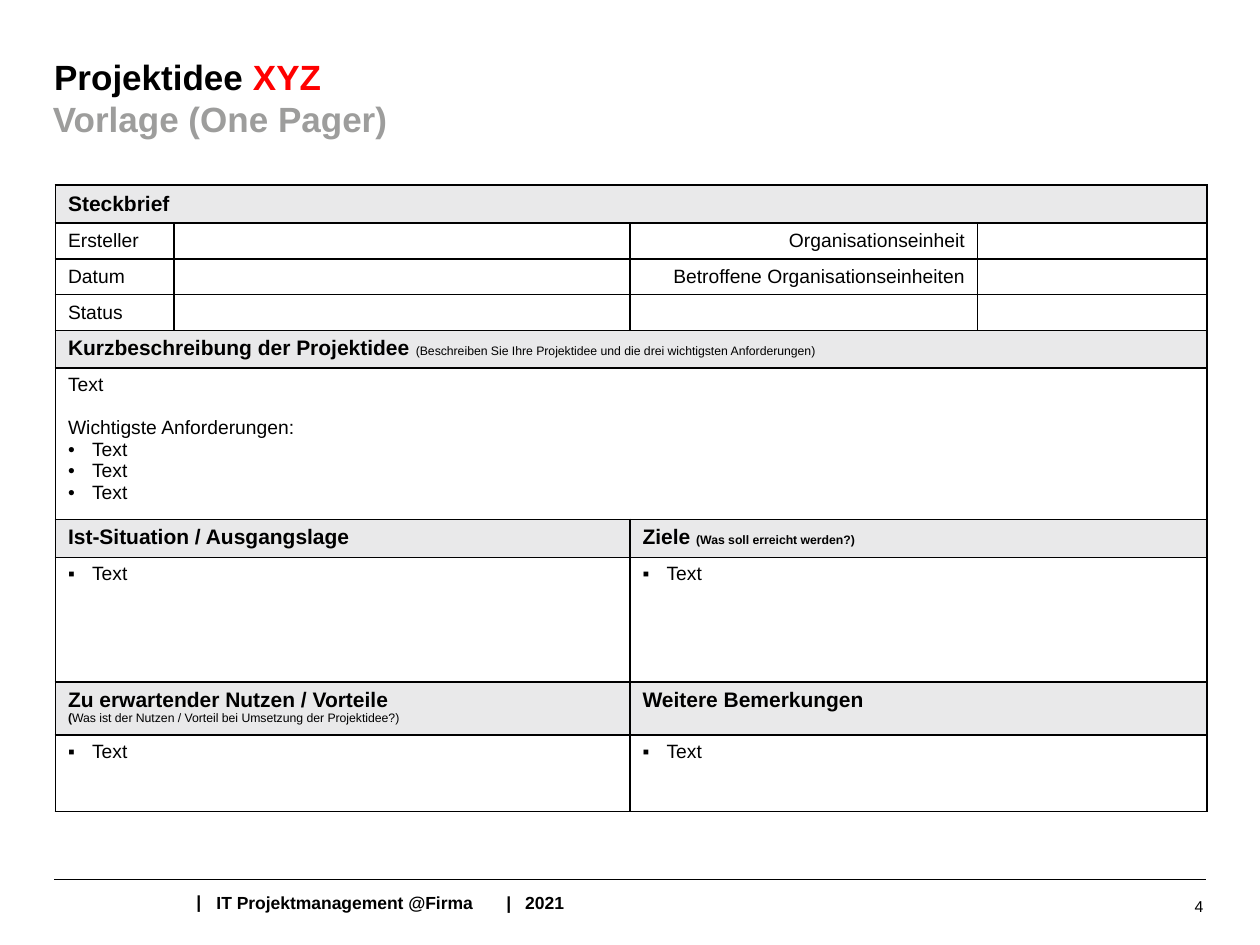
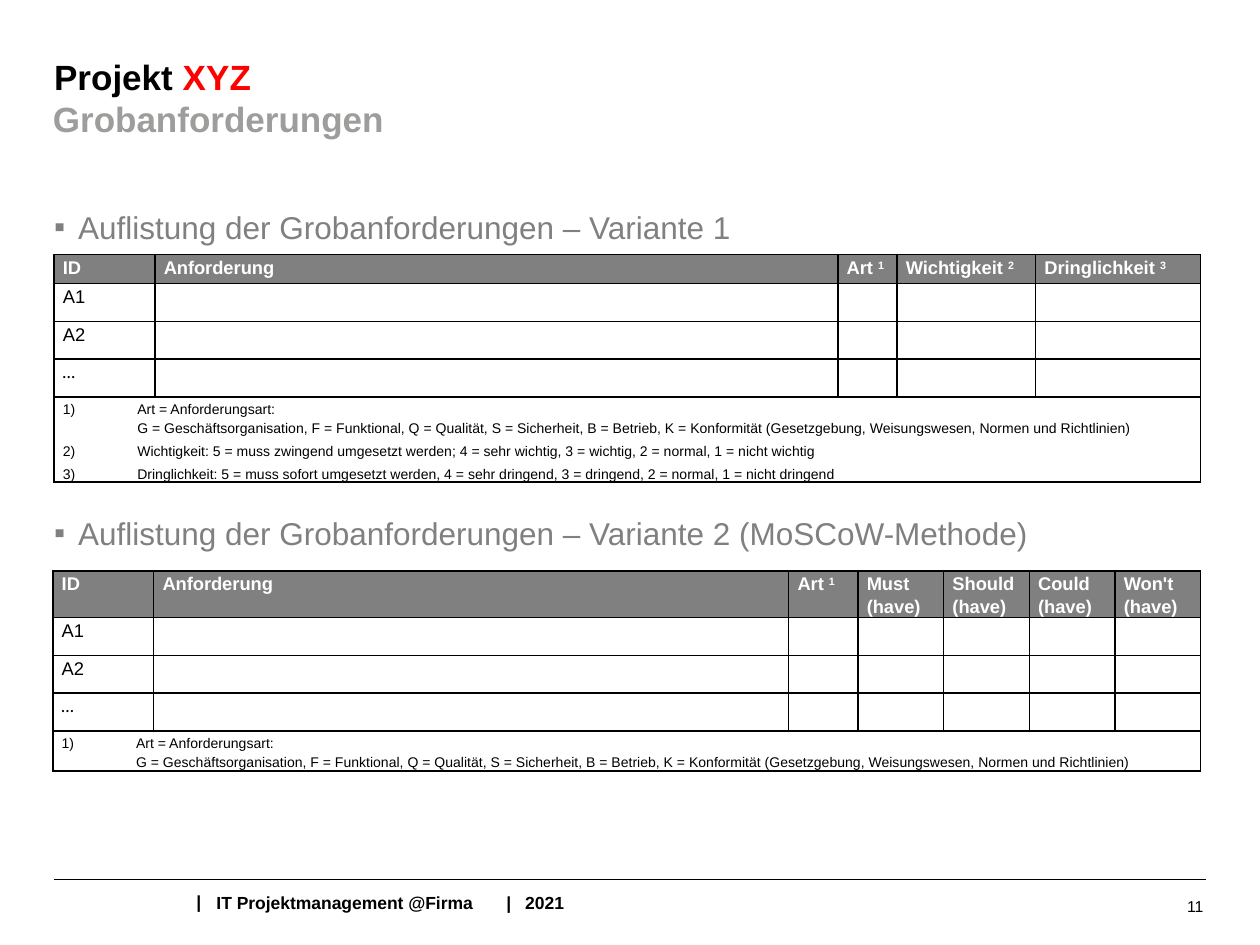
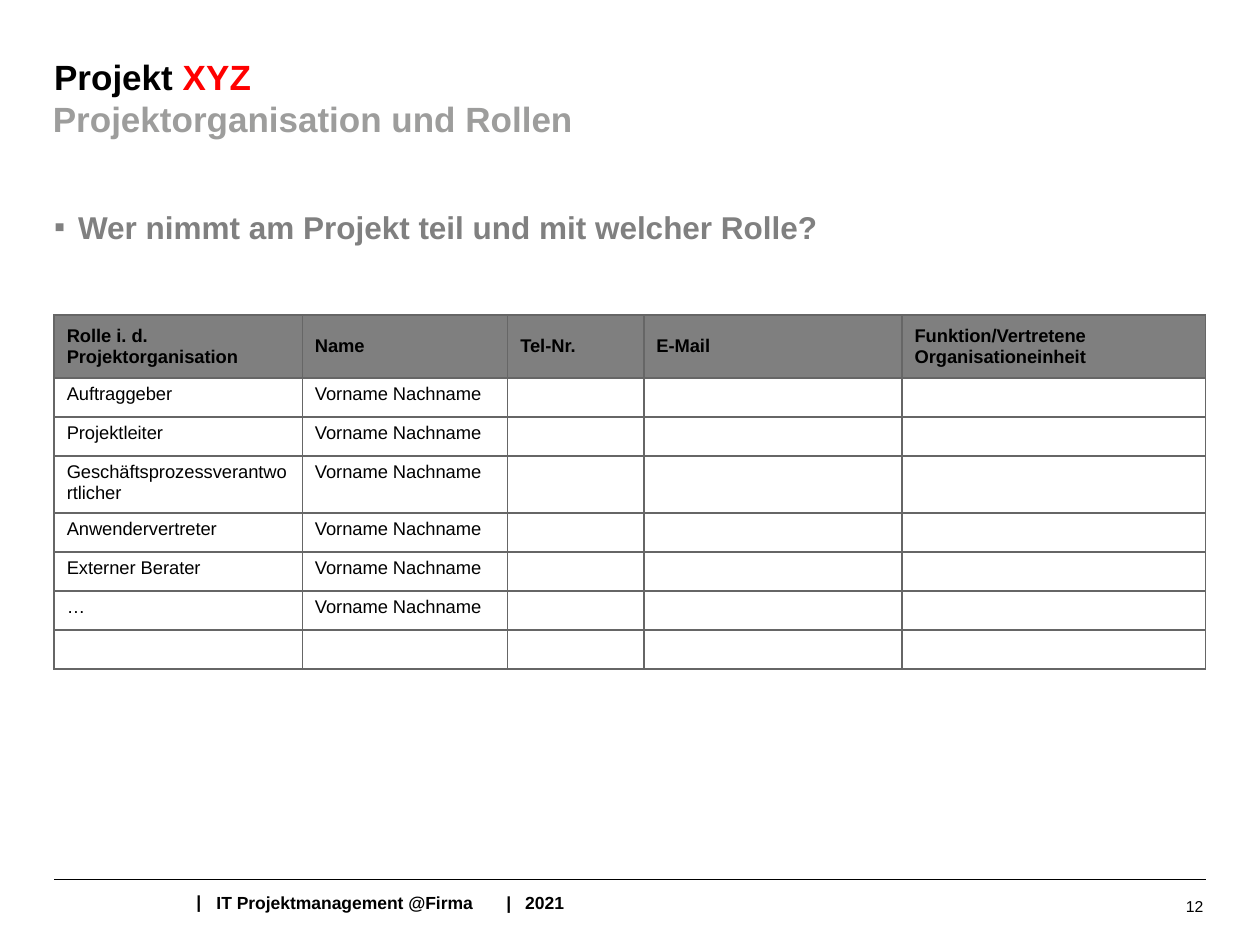
"""Build three project template slides with tables."""
import pptx
import pptx.dml.color
import pptx.enum.shapes
import pptx.enum.text
import pptx.oxml
import pptx.oxml.ns
import pptx.util
from lxml import etree

Inches = pptx.util.Inches
Pt = pptx.util.Pt
qn = pptx.oxml.ns.qn
ALIGN = pptx.enum.text.PP_ALIGN
ANCHOR = pptx.enum.text.MSO_ANCHOR

BLACK, WHITE, RED = "000000", "FFFFFF", "FF0000"
GREY, PALE, SOFT = "808080", "E9E9EA", "9D9D9C"
LEFT, WIDE = 0.43, 9.14
BOLD, PLAIN = {"bold": True}, {"bold": False}
TITLE = {"size": Pt(20), "bold": True}
FOOT = {"size": Pt(10), "bold": True}
HEAD = {"size": Pt(12), "bold": True}
SMALL = {"size": Pt(7)}
SUPER = {"base": 30000}
TIGHT = (0.07, 0.01, 0.07, 0)
NORMAL = (0.1, 0.05, 0.1, 0.05)
KIND = (
    "G = Geschäftsorganisation, F = Funktional, Q = Qualität, S = Sicherheit, "
    "B = Betrieb, K = Konformität (Gesetzgebung, Weisungswesen, Normen und Richtlinien)"
)


def color(code):
    """Turn a hex string into a colour."""
    return pptx.dml.color.RGBColor.from_string(code)


def para(runs, font=None, bullet=None, indent=0, tabs=(), **form):
    """Describe one paragraph."""
    runs = [(runs, {})] if isinstance(runs, str) else runs
    return {"runs": runs, "font": font or {}, "bullet": bullet,
            "indent": indent, "tabs": tabs, "form": form}


def point(text, mark, **font):
    """Describe one bullet paragraph."""
    return para(text, font, bullet=mark, indent=0.19)


def style(run, look):
    """Give a run its font values."""
    look = dict(look)
    run.font.color.rgb = color(look.pop("color", BLACK))
    base = look.pop("base", None)
    for key, value in look.items():
        setattr(run.font, key, value)
    if base:
        run._r.get_or_add_rPr().set("baseline", str(base))


def layout(par, item):
    """Give a paragraph its indent, bullet, tabs and spacing."""
    for key, value in item["form"].items():
        setattr(par, key, value)
    props = par._p.get_or_add_pPr()
    if item["indent"]:
        props.set("marL", str(Inches(item["indent"])))
        props.set("indent", str(-Inches(item["indent"])))
    if item["bullet"]:
        etree.SubElement(props, qn("a:buFont"), typeface="Arial")
        etree.SubElement(props, qn("a:buChar"), char=item["bullet"])
    if item["tabs"]:
        stops = etree.SubElement(props, qn("a:tabLst"))
        for stop in item["tabs"]:
            etree.SubElement(stops, qn("a:tab"), pos=str(Inches(stop)), algn="l")


def write(frame, items, look):
    """Write paragraphs into a text frame."""
    for count, item in enumerate(items):
        par = frame.add_paragraph() if count else frame.paragraphs[0]
        layout(par, item)
        for text, change in item["runs"]:
            for row, line in enumerate(text.split("\n")):
                if row:
                    par.add_line_break()
                run = par.add_run()
                run.text = line
                style(run, {"name": "Arial", **look, **item["font"], **change})


def inset(owner, pad):
    """Set the four margins of a frame or cell."""
    for side, gap in zip(("left", "top", "right", "bottom"), pad):
        setattr(owner, "margin_" + side, Inches(gap))


def box(slide, place, item, look, pad=NORMAL, anchor=ANCHOR.TOP):
    """Add a text box with one paragraph."""
    frame = slide.shapes.add_textbox(*map(Inches, place)).text_frame
    frame.word_wrap = True
    frame.vertical_anchor = anchor
    inset(frame, pad)
    write(frame, [item], look)


def border(cell, code):
    """Draw the four edges of a cell."""
    props = cell._tc.get_or_add_tcPr()
    for side in ("lnL", "lnR", "lnT", "lnB"):
        edge = etree.SubElement(props, qn("a:" + side), w=str(Pt(1)))
        fill = etree.SubElement(edge, qn("a:solidFill"))
        etree.SubElement(fill, qn("a:srgbClr"), val=code)


def grid(slide, place, cols, rows, cells, look, heads, shade,
         spans=(), middle=(), pad=NORMAL, edge=BLACK):
    """Add a table from a map of cell texts."""
    size = (sum(cols), sum(rows))
    shape = slide.shapes.add_table(len(rows), len(cols), *map(Inches, place + size))
    table = shape.table
    table.first_row = table.horz_banding = False
    for col, width in zip(table.columns, cols):
        col.width = Inches(width)
    for row, height in zip(table.rows, rows):
        row.height = Inches(height)
    for row, first, last in spans:
        table.cell(row, first).merge(table.cell(row, last))
    for row in range(len(rows)):
        for col in range(len(cols)):
            cell = table.cell(row, col)
            border(cell, edge)
            if row in heads:
                cell.fill.solid()
                cell.fill.fore_color.rgb = color(shade)
            else:
                cell.fill.background()
            inset(cell, pad)
            cell.vertical_anchor = ANCHOR.MIDDLE if row in middle else ANCHOR.TOP
            write(cell.text_frame, cells.get((row, col), []), look)
            last = cell.text_frame.paragraphs[-1]._p
            etree.SubElement(last, qn("a:endParaRPr"), sz=str(int(look["size"].pt * 100)))


def frame(deck, name, part, number):
    """Add a slide with title, subtitle and footer."""
    slide = deck.slides.add_slide(deck.slide_layouts[6])
    line = slide.shapes.add_connector(
        pptx.enum.shapes.MSO_CONNECTOR.STRAIGHT,
        *map(Inches, (LEFT, 6.98, LEFT + WIDE, 6.98)))
    line.line.color.rgb = color(BLACK)
    line.line.width = Pt(0.75)
    etree.SubElement(line._element.spPr, qn("a:effectLst"))
    box(slide, (1.46, 7.02, 0.24, 0.27), para("|"), FOOT)
    box(slide, (1.62, 7.03, 3.23, 0.27),
        para("IT Projektmanagement @Firma\t|\t2021", tabs=(2.3, 2.45)), FOOT)
    box(slide, (7.32, 6.95, 2.33, 0.48), para(str(number), alignment=ALIGN.RIGHT),
        {"size": Pt(9)}, anchor=ANCHOR.MIDDLE)
    pad = (0, 0.07, 0.1, 0.05)
    title = para([(name + " ", {}), ("XYZ", {"color": RED})])
    box(slide, (LEFT, 0.37, WIDE, 0.39), title, TITLE, pad)
    box(slide, (0.42, 0.7, WIDE, 0.39), para(part), {**TITLE, "color": SOFT}, pad)
    return slide


def topic(slide, top, text, bold=False):
    """Add a large grey bullet line."""
    box(slide, (LEFT, top, WIDE, 0.33), point(text, "▪"),
        {"size": Pt(18), "color": GREY, "bold": bold}, (0, 0.03, 0, 0))


def idea(deck):
    """Build the project idea slide."""
    slide = frame(deck, "Projektidee", "Vorlage (One Pager)", 4)
    cells = {
        (0, 0): [para("Steckbrief", HEAD)],
        (4, 0): [para([
            ("Kurzbeschreibung der Projektidee ", HEAD),
            ("(Beschreiben Sie Ihre Projektidee und die drei wichtigsten Anforderungen)", SMALL),
        ])],
        (5, 0): [para("Text"), para("Wichtigste Anforderungen:", space_before=Pt(12.3))]
        + [point("Text", "•") for _ in range(3)],
        (6, 0): [para("Ist-Situation / Ausgangslage", HEAD)],
        (6, 2): [para([("Ziele ", {}), ("(Was soll erreicht werden?)", SMALL)], HEAD)],
        (8, 0): [para([
            ("Zu erwartender Nutzen / Vorteile\n", HEAD), ("(", {**SMALL, **BOLD}),
            ("Was ist der Nutzen / Vorteil bei Umsetzung der Projektidee?)", SMALL),
        ])],
        (8, 2): [para("Weitere Bemerkungen", HEAD)],
    }
    for row, text in enumerate(("Ersteller", "Datum", "Status"), 1):
        cells[row, 0] = [para(text)]
    for row, text in enumerate(("Organisationseinheit", "Betroffene Organisationseinheiten"), 1):
        cells[row, 2] = [para(text, alignment=ALIGN.RIGHT)]
    for row in (7, 9):
        for col in (0, 2):
            cells[row, col] = [point("Text", "▪")]
    spans = [(row, 0, 3) for row in (0, 4, 5)]
    spans += [(row, col, col + 1) for row in range(6, 10) for col in (0, 2)]
    grid(slide, (0.44, 1.47), (0.94, 3.62, 2.76, 1.82),
         (0.3, 0.28, 0.28, 0.28, 0.3, 1.2, 0.3, 0.99, 0.42, 0.61),
         cells, {"size": Pt(11), **PLAIN}, (0, 4, 6, 8), PALE, spans, range(4))


def needs(slide, place, cols, rows, heads, notes):
    """Add a table of requirements with footnotes."""
    cells = {}
    for col, (text, mark) in enumerate(heads):
        runs = [(text, {})] + ([(mark, SUPER)] if mark else [])
        cells[0, col] = [para(runs, {"color": WHITE, **BOLD}, line_spacing=Pt(13))]
    for row, text in enumerate(("A1", "A2", "…"), 1):
        look = {"name": "Calibri", "italic": True} if text == "…" else {}
        cells[row, 0] = [para(text, look, line_spacing=Pt(13))]
    cells[4, 0] = [
        para(f"{count}) \t{text}", {"size": Pt(8)}, indent=0.59, tabs=(0.59,),
             line_spacing=Pt(11), space_before=Pt(1 if count > 1 else 0), space_after=Pt(1))
        for count, text in enumerate(notes, 1)]
    grid(slide, place, cols, rows, cells, {"size": Pt(10.5), **PLAIN}, (0,), GREY,
         [(4, 0, len(cols) - 1)], pad=TIGHT)


def rough(deck):
    """Build the rough requirements slide."""
    slide = frame(deck, "Projekt", "Grobanforderungen", 11)
    kind = "Art = Anforderungsart:\n" + KIND
    start = [("ID", ""), ("Anforderung", ""), ("Art ", "1")]
    topic(slide, 1.62, "Auflistung der Grobanforderungen – Variante 1")
    needs(slide, (0.43, 2.02), (0.8, 5.42, 0.47, 1.1, 1.31), (0.23, 0.3, 0.3, 0.3, 0.67),
          start + [("Wichtigkeit ", "2"), ("Dringlichkeit ", "3")],
          (kind,
           "Wichtigkeit: 5 = muss zwingend umgesetzt werden; 4 = sehr wichtig, "
           "3 = wichtig, 2 = normal, 1 = nicht wichtig",
           "Dringlichkeit: 5 = muss sofort umgesetzt werden, 4 = sehr dringend, "
           "3 = dringend, 2 = normal, 1 = nicht dringend"))
    needs(slide, (0.42, 4.53), (0.8, 5.04, 0.55) + (0.68,) * 4, (0.36, 0.3, 0.3, 0.3, 0.31),
          start + [(f"{word} (have)", "") for word in ("Must", "Should", "Could", "Won't")],
          (kind,))
    topic(slide, 4.05, "Auflistung der Grobanforderungen – Variante 2 (MoSCoW-Methode)")


def roles(deck):
    """Build the project roles slide."""
    slide = frame(deck, "Projekt", "Projektorganisation und Rollen", 12)
    heads = ("Rolle i. d. Projektorganisation", "Name", "Tel-Nr.", "E-Mail",
             "Funktion/Vertretene Organisationeinheit")
    cells = {(0, col): [para(text, BOLD)] for col, text in enumerate(heads)}
    people = ("Auftraggeber", "Projektleiter", "Geschäftsprozessverantwortlicher",
              "Anwendervertreter", "Externer Berater", "…")
    for row, text in enumerate(people, 1):
        cells[row, 0] = [para(text)]
        cells[row, 1] = [para("Vorname Nachname")]
    grid(slide, (LEFT, 2.5), (1.97, 1.63, 1.08, 2.05, 2.41),
         (0.5, 0.31, 0.31, 0.42) + (0.31,) * 4, cells, {"size": Pt(10.5), **PLAIN},
         (0,), "7F7F7F", middle=(0,), edge="666666")
    topic(slide, 1.62, "Wer nimmt am Projekt teil und mit welcher Rolle?", True)


def main():
    """Build and save the deck."""
    deck = pptx.Presentation()
    deck.slide_width, deck.slide_height = Inches(10), Inches(7.5)
    for build in (idea, rough, roles):
        build(deck)
    deck.save("out.pptx")


if __name__ == "__main__":
    main()
